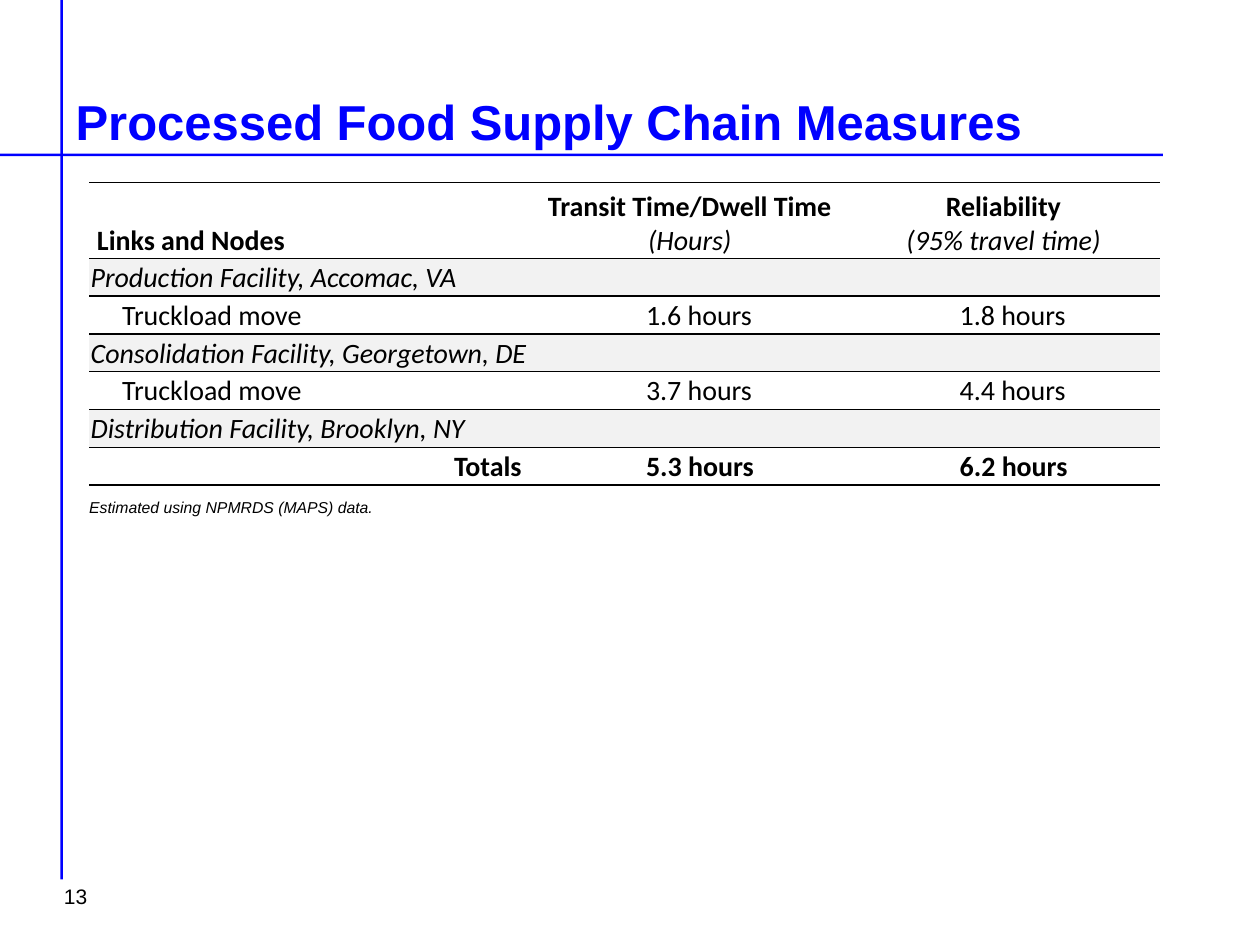
from lxml import etree
from pptx import Presentation
from pptx.dml.color import RGBColor
from pptx.enum.shapes import MSO_SHAPE
from pptx.enum.text import MSO_ANCHOR, PP_ALIGN
from pptx.oxml.ns import qn
from pptx.util import Inches, Pt

BLUE = RGBColor(0x00, 0x00, 0xFF)
BLACK = RGBColor(0x00, 0x00, 0x00)
BAND = RGBColor(0xF2, 0xF2, 0xF2)


def format_font(paragraph, name, size, color, bold=False, italic=False):
    for run in paragraph.runs:
        font = run.font
        font.name, font.size, font.color.rgb = name, Pt(size), color
        font.bold, font.italic = bold, italic


def add_borders(cell):
    """Black rules above and below the cell, none at its sides."""
    properties = cell._tc.get_or_add_tcPr()
    for side in ("lnL", "lnR", "lnT", "lnB"):
        line = etree.SubElement(properties, qn(f"a:{side}"), w=str(Pt(1)))
        if side in ("lnL", "lnR"):
            etree.SubElement(line, qn("a:noFill"))
        else:
            fill = etree.SubElement(line, qn("a:solidFill"))
            etree.SubElement(fill, qn("a:srgbClr"), val=str(BLACK))


presentation = Presentation()
presentation.slide_width = Inches(10)
presentation.slide_height = Inches(7.5)
slide = presentation.slides.add_slide(presentation.slide_layouts[5])

# Crossing blue rules
for left, top, width, height in ((0, 1.22, 9.23, 0.02), (0.48, 0, 0.02, 6.98)):
    rule = slide.shapes.add_shape(
        MSO_SHAPE.RECTANGLE, Inches(left), Inches(top), Inches(width), Inches(height))
    rule.shadow.inherit = False
    rule.fill.solid()
    rule.fill.fore_color.rgb = BLUE
    rule.line.fill.background()

# Title
title = slide.shapes.title
title.left, title.top = Inches(0.5), Inches(0)
title.width, title.height = Inches(9), Inches(1.24)
title.text_frame.text = "Processed Food Supply Chain Measures"
title.text_frame.vertical_anchor = MSO_ANCHOR.BOTTOM
title.text_frame.paragraphs[0].alignment = PP_ALIGN.LEFT
format_font(title.text_frame.paragraphs[0], "Arial", 28, BLUE, bold=True)

# Table of links and nodes
rows = [
    ("Links and Nodes", "Transit Time/Dwell Time\n(Hours)", "Reliability\n(95% travel time)"),
    ("Production Facility, Accomac, VA", "", ""),
    ("\tTruckload move", "\t1.6 hours", "\t1.8 hours"),
    ("Consolidation Facility, Georgetown, DE", "", ""),
    ("\tTruckload move", "\t3.7 hours", "\t4.4 hours"),
    ("Distribution Facility, Brooklyn, NY", "", ""),
    ("Totals", "\t5.3 hours", "\t6.2 hours"),
]
last_row = len(rows) - 1
table = slide.shapes.add_table(
    len(rows), 3, Inches(0.71), Inches(1.45), Inches(8.5), Inches(2.4)).table
table.first_row = table.horz_banding = False
for column, width in zip(table.columns, (3.52, 2.49, 2.49)):
    column.width = Inches(width)

for row_index, texts in enumerate(rows):
    table.rows[row_index].height = Inches(0.3 if row_index else 0.6)
    is_header, is_total = row_index == 0, row_index == last_row
    is_facility = row_index % 2 == 1
    for column_index, text in enumerate(texts):
        cell = table.cell(row_index, column_index)
        cell.margin_left = cell.margin_right = cell.margin_top = Inches(0.01)
        cell.margin_bottom = 0
        cell.vertical_anchor = MSO_ANCHOR.BOTTOM if is_header else MSO_ANCHOR.MIDDLE
        add_borders(cell)
        if is_facility:
            cell.fill.solid()
            cell.fill.fore_color.rgb = BAND
        else:
            cell.fill.background()
        cell.text_frame.text = text

        for line_index, paragraph in enumerate(cell.text_frame.paragraphs):
            if is_header and column_index:
                paragraph.alignment = PP_ALIGN.CENTER
            elif is_header:
                cell.margin_left = Inches(0.06)
            elif is_total and column_index == 0:
                paragraph.alignment = PP_ALIGN.RIGHT
                cell.margin_right = Inches(0.09)

            # Tab stops: an indent for links, decimal alignment for hours
            if text.startswith("\t"):
                properties = paragraph._p.get_or_add_pPr()
                position, kind = (Inches(1), "dec") if column_index else (Inches(0.25), "l")
                if column_index == 0:
                    properties.set("marL", str(position))
                    properties.set("indent", str(-position))
                tabs = etree.SubElement(properties, qn("a:tabLst"))
                etree.SubElement(tabs, qn("a:tab"), pos=str(position), algn=kind)

            if not text:
                etree.SubElement(paragraph._p, qn("a:endParaRPr"), sz="1600")
            format_font(paragraph, "Calibri", 16, BLACK,
                        bold=is_total or (is_header and line_index == 0),
                        italic=is_facility or line_index == 1)

# Source note and page number
for text, left, top, width, height, size, italic in (
        ("Estimated using NPMRDS (MAPS) data.", 0.61, 3.9, 5.54, 0.25, 9, True),
        ("13", 0.41, 6.91, 0.73, 0.4, 12, False)):
    text_box = slide.shapes.add_textbox(
        Inches(left), Inches(top), Inches(width), Inches(height))
    text_box.text_frame.word_wrap = True
    text_box.text_frame.vertical_anchor = MSO_ANCHOR.MIDDLE
    text_box.text_frame.text = text
    format_font(text_box.text_frame.paragraphs[0], "Arial", size, BLACK, italic=italic)

presentation.save("out.pptx")
